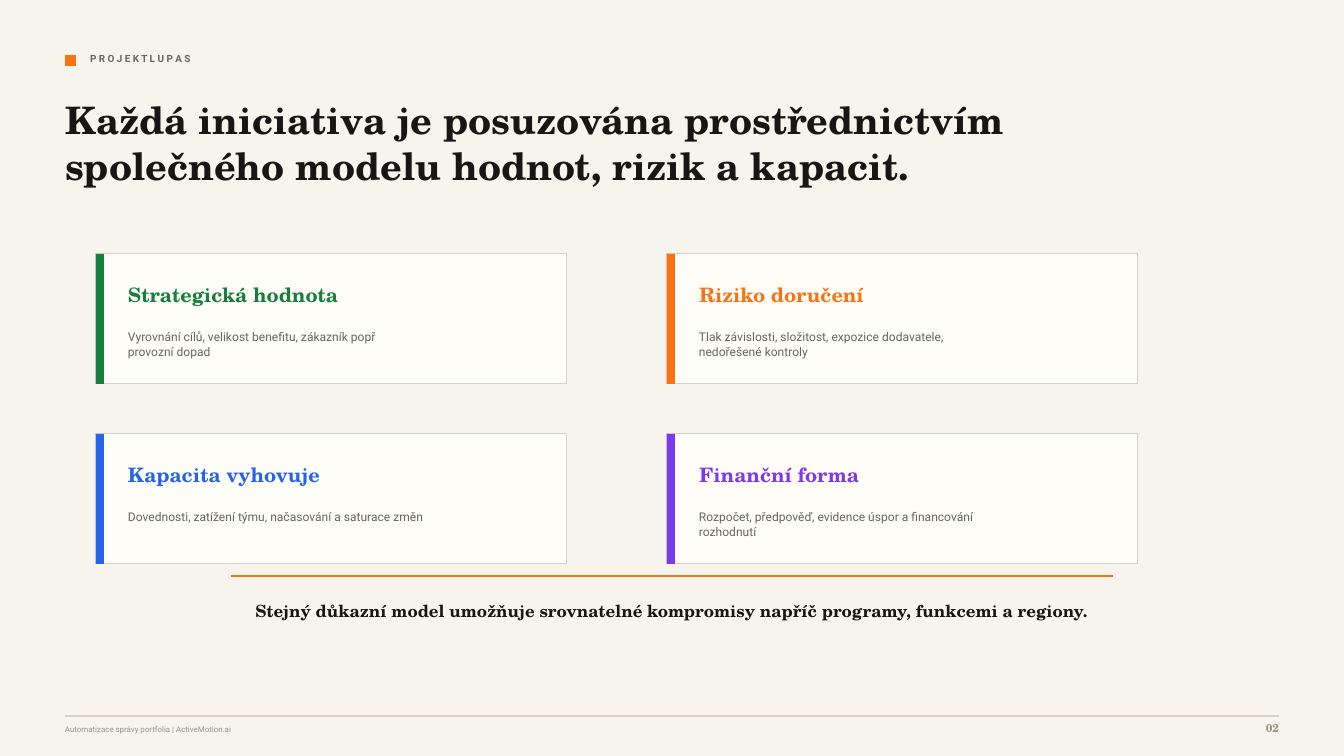
from pptx import Presentation
from pptx.dml.color import RGBColor
from pptx.enum.shapes import MSO_CONNECTOR, MSO_SHAPE
from pptx.enum.text import PP_ALIGN
from pptx.oxml.ns import qn
from pptx.util import Pt
from lxml.etree import SubElement

LABEL = "P R O J E K T L U P A S"
TITLE = "Každá iniciativa je posuzována prostřednictvím společného modelu hodnot, rizik a kapacit."
CARDS = [
    ("Strategická hodnota", "green",
     ["Vyrovnání cílů, velikost benefitu, zákazník popř", "provozní dopad"]),
    ("Riziko doručení", "orange",
     ["Tlak závislosti, složitost, expozice dodavatele,", "nedořešené kontroly"]),
    ("Kapacita vyhovuje", "blue",
     ["Dovednosti, zatížení týmu, načasování a saturace změn"]),
    ("Finanční forma", "violet",
     ["Rozpočet, předpověď, evidence úspor a financování", "rozhodnutí"]),
]
SUMMARY = "Stejný důkazní model umožňuje srovnatelné kompromisy napříč programy, funkcemi a regiony."
FOOTER = "Automatizace správy portfolia | ActiveMotion.ai"
PAGE_NUMBER = "02"

SERIF, SANS = "TeX Gyre Schola", "Roboto"
THEME = {
    "colors": {
        "paper": "F7F4EE", "card": "FFFDF8", "border": "D9D0C3", "ink": "171614",
        "muted": "69635A", "faint": "9A9184", "green": "15803D", "orange": "F97316",
        "blue": "2563EB", "violet": "7C3AED",
    },
    "type": {
        "label": {"name": SANS, "size": Pt(7.1), "bold": True},
        "title": {"name": SERIF, "size": Pt(27), "bold": True},
        "heading": {"name": SERIF, "size": Pt(14.2), "bold": True},
        "body": {"name": SANS, "size": Pt(8.6), "bold": False},
        "summary": {"name": SERIF, "size": Pt(12), "bold": True},
        "footer": {"name": SANS, "size": Pt(5.6), "bold": False},
        "number": {"name": SERIF, "size": Pt(8.2), "bold": True},
    },
}

EMU_PER_PX = 914400 / 100.8
PAGE_WIDTH, PAGE_HEIGHT = 1344, 756
MARGIN = 65
CARD_LEFT, CARD_TOP, CARD_WIDTH, CARD_HEIGHT = 96, 254, 471, 130
COLUMNS, COLUMN_STEP, ROW_STEP = 2, 571, 180
STRIPE_WIDTH, CARD_INDENT = 8, 32


def px(*lengths):
    return [round(length * EMU_PER_PX) for length in lengths]


def color(name):
    return RGBColor.from_string(THEME["colors"][name])


def add_block(page, area, fill, border=None):
    block = page.shapes.add_shape(MSO_SHAPE.RECTANGLE, *px(*area))
    block.shadow.inherit = False
    block.fill.solid()
    block.fill.fore_color.rgb = color(fill)
    if border:
        block.line.color.rgb = color(border)
        block.line.width = Pt(0.75)
    else:
        block.line.fill.background()


def add_rule(page, left, right, top, ink, width):
    rule = page.shapes.add_connector(MSO_CONNECTOR.STRAIGHT, *px(left, top, right, top))
    rule.line.color.rgb = color(ink)
    rule.line.width = Pt(width)
    SubElement(rule._element.spPr, qn("a:effectLst"))


def add_text(page, area, lines, style, ink, align=PP_ALIGN.LEFT):
    frame = page.shapes.add_textbox(*px(*area)).text_frame
    frame.word_wrap = True
    for side in ("left", "top", "right", "bottom"):
        setattr(frame, f"margin_{side}", 0)
    for index, line in enumerate(lines):
        para = frame.add_paragraph() if index else frame.paragraphs[0]
        para.alignment = align
        span = para.add_run()
        span.text = line
        span.font.color.rgb = color(ink)
        for key, value in THEME["type"][style].items():
            setattr(span.font, key, value)


def add_card(page, left, top, heading, accent, lines):
    add_block(page, (left, top, CARD_WIDTH, CARD_HEIGHT), "card", "border")
    add_block(page, (left, top, STRIPE_WIDTH, CARD_HEIGHT), accent)
    text_left = left + CARD_INDENT
    add_text(page, (text_left, top + 29, 231, 25), [heading], "heading", accent)
    add_text(page, (text_left, top + 76, 357, 35), lines, "body", "muted")


def main():
    deck = Presentation()
    deck.slide_width, deck.slide_height = px(PAGE_WIDTH, PAGE_HEIGHT)
    page = deck.slides.add_slide(deck.slide_layouts[6])

    add_block(page, (0, 0, PAGE_WIDTH, PAGE_HEIGHT), "paper")
    add_block(page, (MARGIN, 55, 11, 11), "orange")
    add_text(page, (90, 53, 588, 19), [LABEL], "label", "muted")
    add_text(page, (MARGIN, 97, 945, 109), [TITLE], "title", "ink")

    for index, card in enumerate(CARDS):
        row, column = divmod(index, COLUMNS)
        add_card(page, CARD_LEFT + column * COLUMN_STEP, CARD_TOP + row * ROW_STEP, *card)

    add_rule(page, 231, 1113, 576, "orange", 1.5)
    add_text(page, (252, 601, 840, 25), [SUMMARY], "summary", "ink", PP_ALIGN.CENTER)

    right = PAGE_WIDTH - MARGIN
    add_rule(page, MARGIN, right, 716, "border", 0.75)
    add_text(page, (MARGIN, 725, 798, 15), [FOOTER], "footer", "faint")
    add_text(page, (right - 50, 721, 50, 19), [PAGE_NUMBER], "number", "faint", PP_ALIGN.RIGHT)
    deck.save("out.pptx")


if __name__ == "__main__":
    main()
